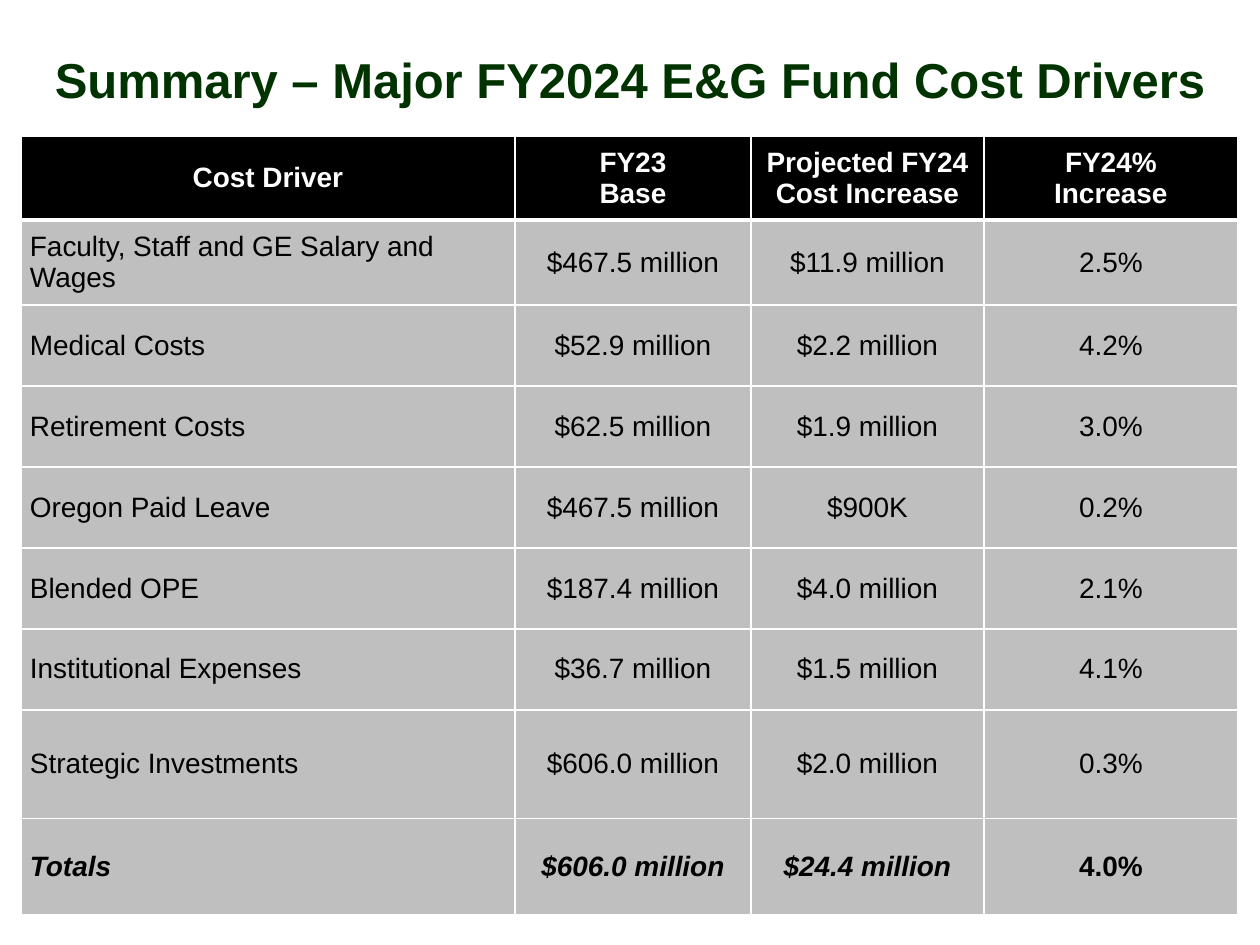
from lxml.etree import SubElement
from pptx import Presentation
from pptx.dml.color import RGBColor
from pptx.enum.text import MSO_ANCHOR, PP_ALIGN
from pptx.oxml.ns import qn
from pptx.util import Emu, Pt

SCALE = 914400 / 126
COLORS = {"green": "003300", "black": "000000", "white": "FFFFFF", "gray": "BFBFBF"}
COLS = [494, 236, 233, 254]
ROWS = [84, 85] + [81] * 5 + [109, 96]
DATA = [
    ["Cost Driver", "FY23\vBase", "Projected FY24 Cost Increase", "FY24%\nIncrease"],
    ["Faculty, Staff and GE Salary and Wages", "$467.5 million", "$11.9 million", "2.5%"],
    ["Medical Costs", "$52.9 million", "$2.2 million", "4.2%"],
    ["Retirement Costs", "$62.5 million", "$1.9 million", "3.0%"],
    ["Oregon Paid Leave", "$467.5 million", "$900K", "0.2%"],
    ["Blended OPE", "$187.4 million", "$4.0 million", "2.1%"],
    ["Institutional Expenses", "$36.7 million", "$1.5 million", "4.1%"],
    ["Strategic Investments", "$606.0 million", "$2.0 million", "0.3%"],
    ["Totals", "$606.0 million", "$24.4 million", "4.0%"],
]


def px(n):
    return Emu(round(n * SCALE))


def write(frame, text, size=16, color="black", bold=False, italic=False, align=PP_ALIGN.CENTER):
    frame.text = text
    frame.word_wrap = True
    for para in frame.paragraphs:
        para.alignment = align
        for run in para.runs:
            font = run.font
            font.name = "Arial"
            font.size = Pt(size)
            font.bold = bold
            font.italic = italic
            font.color.rgb = RGBColor.from_string(COLORS[color])


deck = Presentation()
deck.slide_width, deck.slide_height = px(1260), px(945)
slide = deck.slides.add_slide(deck.slide_layouts[6])

frame = slide.shapes.add_table(
    len(ROWS), len(COLS), px(21), px(136), px(sum(COLS)), px(sum(ROWS)))
table = frame.table
table.horz_banding = False
for col, width in zip(table.columns, COLS):
    col.width = px(width)
for row, height in zip(table.rows, ROWS):
    row.height = px(height)

last = len(DATA) - 1
for r, line in enumerate(DATA):
    for c, text in enumerate(line):
        cell = table.cell(r, c)
        head, total = r == 0, r == last
        write(cell.text_frame, text,
              color="white" if head else "black",
              bold=head or total,
              italic=total and c < 3,
              align=PP_ALIGN.LEFT if c == 0 and not head else PP_ALIGN.CENTER)
        cell.vertical_anchor = MSO_ANCHOR.MIDDLE
        cell.margin_left = cell.margin_right = px(9)
        cell.margin_top = cell.margin_bottom = px(5)
        props = cell._tc.get_or_add_tcPr()
        for side in "LRTB":
            thick = (head and side == "B") or (r == 1 and side == "T")
            edge = SubElement(props, qn("a:ln" + side), w=str(Pt(3 if thick else 1)))
            fill = SubElement(edge, qn("a:solidFill"))
            SubElement(fill, qn("a:srgbClr"), val=COLORS["white"])
        cell.fill.solid()
        cell.fill.fore_color.rgb = RGBColor.from_string(COLORS["black" if head else "gray"])

title = slide.shapes.add_textbox(px(0), px(21), px(1260), px(115)).text_frame
title.vertical_anchor = MSO_ANCHOR.MIDDLE
write(title, "Summary – Major FY2024 E&G Fund Cost Drivers", size=28, color="green", bold=True)

deck.save("out.pptx")
